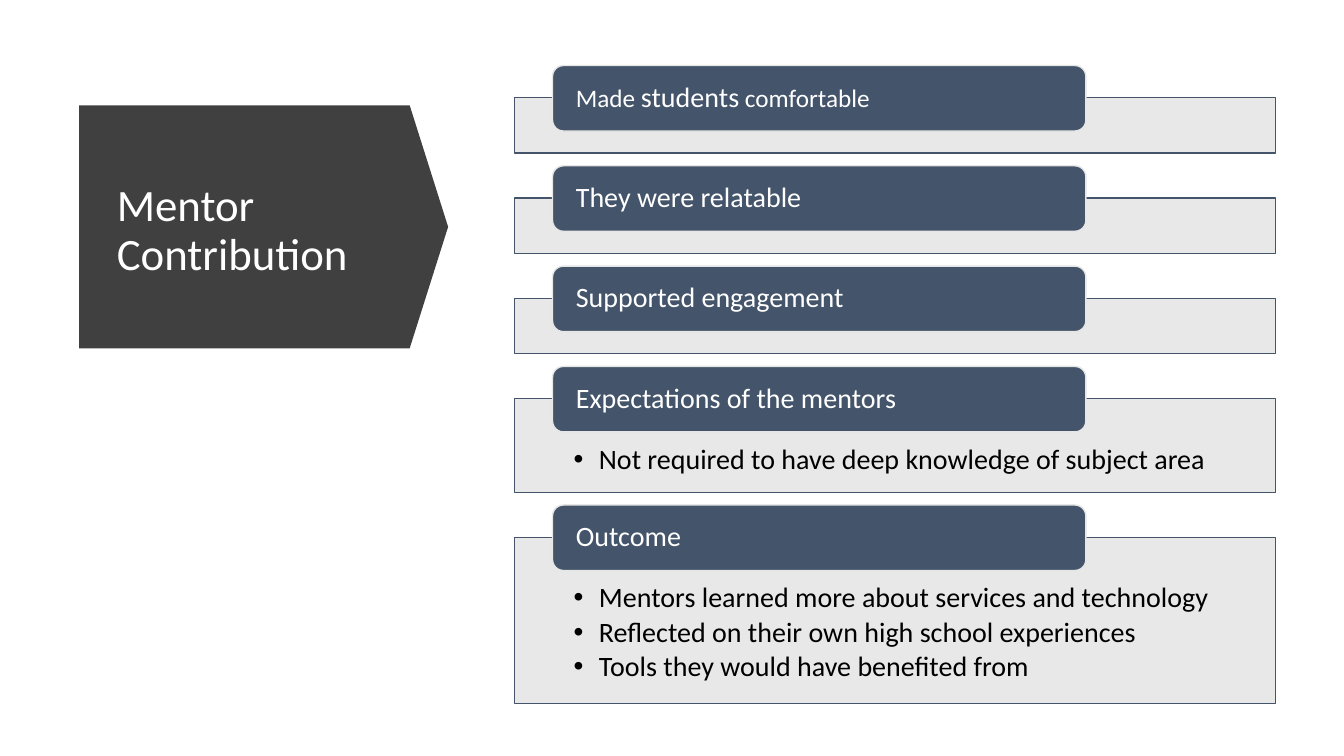
from lxml.etree import SubElement
from pptx import Presentation
from pptx.dml.color import RGBColor
from pptx.enum.shapes import MSO_SHAPE
from pptx.enum.text import MSO_ANCHOR, PP_ALIGN
from pptx.oxml.ns import qn
from pptx.util import Inches, Pt

DARK, NAVY, GREY, WHITE, BLACK = "404040", "44546A", "E7E6E6", "FFFFFF", "000000"
SECTIONS = [
    ([("Made ", 18), ("students", 20), (" comfortable", 18)], [], 0.55),
    ([("They were relatable", 20)], [], 0.55),
    ([("Supported engagement", 20)], [], 0.55),
    ([("Expectations of the mentors", 20)],
     ["Not required to have deep knowledge of subject area"], 0.93),
    ([("Outcome", 20)],
     ["Mentors learned more about services and technology",
      "Reflected on their own high school experiences",
      "Tools they would have benefited from"], 1.65),
]
FIRST_TOP, GAP, LABEL_RISE = 0.97, 0.445, 0.32


def rgb(value):
    return RGBColor.from_string(value)


class Deck:
    """Holds the slide and its text style, and draws each kind of element."""

    def __init__(self, slide, font="Calibri"):
        self.slide = slide
        self.font = font

    def shape(self, kind, box, fill, line=None, alpha=None):
        sp = self.slide.shapes.add_shape(kind, *map(Inches, box))
        sp.shadow.inherit = False
        sp.fill.solid()
        sp.fill.fore_color.rgb = rgb(fill)
        if alpha:
            color = sp.fill._xPr.find(".//" + qn("a:srgbClr"))
            SubElement(color, qn("a:alpha"), val=str(alpha * 1000))
        if line:
            sp.line.color.rgb = rgb(line)
            sp.line.width = Pt(1)
        else:
            sp.line.fill.background()
        return sp

    def text(self, sp, paragraphs, color, insets, anchor=MSO_ANCHOR.MIDDLE, bullet=False):
        tf = sp.text_frame
        tf.word_wrap = True
        tf.vertical_anchor = anchor
        tf.margin_left, tf.margin_top, tf.margin_right, tf.margin_bottom = map(Inches, insets)
        for i, runs in enumerate(paragraphs):
            p = tf.add_paragraph() if i else tf.paragraphs[0]
            p.alignment = PP_ALIGN.LEFT
            p.line_spacing = 0.9
            if bullet:
                p.space_after = Pt(3)
                pPr = p._p.get_or_add_pPr()
                pPr.set("marL", str(Inches(0.25)))
                pPr.set("indent", str(Inches(-0.25)))
                SubElement(pPr, qn("a:buFont"), typeface="Arial")
                SubElement(pPr, qn("a:buChar"), char="•")
            for content, size in runs:
                r = p.add_run()
                r.text = content
                r.font.name = self.font
                r.font.size = Pt(size)
                r.font.color.rgb = rgb(color)

    def title(self, content):
        arrow = self.shape(MSO_SHAPE.DOWN_ARROW, (1.41, 0.42, 2.41, 3.66), DARK)
        arrow.rotation = 270
        arrow.adjustments[0] = 1
        arrow.adjustments[1] = 0.158
        box = self.slide.shapes.add_textbox(*map(Inches, (1.06, 1.32, 2.92, 1.95)))
        self.text(box, [[(content, 32)]], WHITE, (0.1, 0.05, 0.1, 0.05))

    def section(self, top, height, heading, bullets):
        panel = self.shape(MSO_SHAPE.RECTANGLE, (5.1, top, 7.55, height), GREY, NAVY, 90)
        if bullets:
            self.text(panel, [[(b, 20)] for b in bullets], BLACK,
                      (0.59, 0.46, 0.59, 0.16), MSO_ANCHOR.TOP, bullet=True)
        label = self.shape(MSO_SHAPE.ROUNDED_RECTANGLE,
                           (5.48, top - LABEL_RISE, 5.29, 0.65), NAVY, GREY)
        self.text(label, [heading], WHITE, (0.2, 0, 0.2, 0))


def main():
    prs = Presentation()
    prs.slide_width, prs.slide_height = Inches(13.33), Inches(7.5)
    deck = Deck(prs.slides.add_slide(prs.slide_layouts[6]))
    deck.title("Mentor Contribution")
    top = FIRST_TOP
    for heading, bullets, height in SECTIONS:
        deck.section(top, height, heading, bullets)
        top += height + GAP
    prs.save("out.pptx")


if __name__ == "__main__":
    main()
